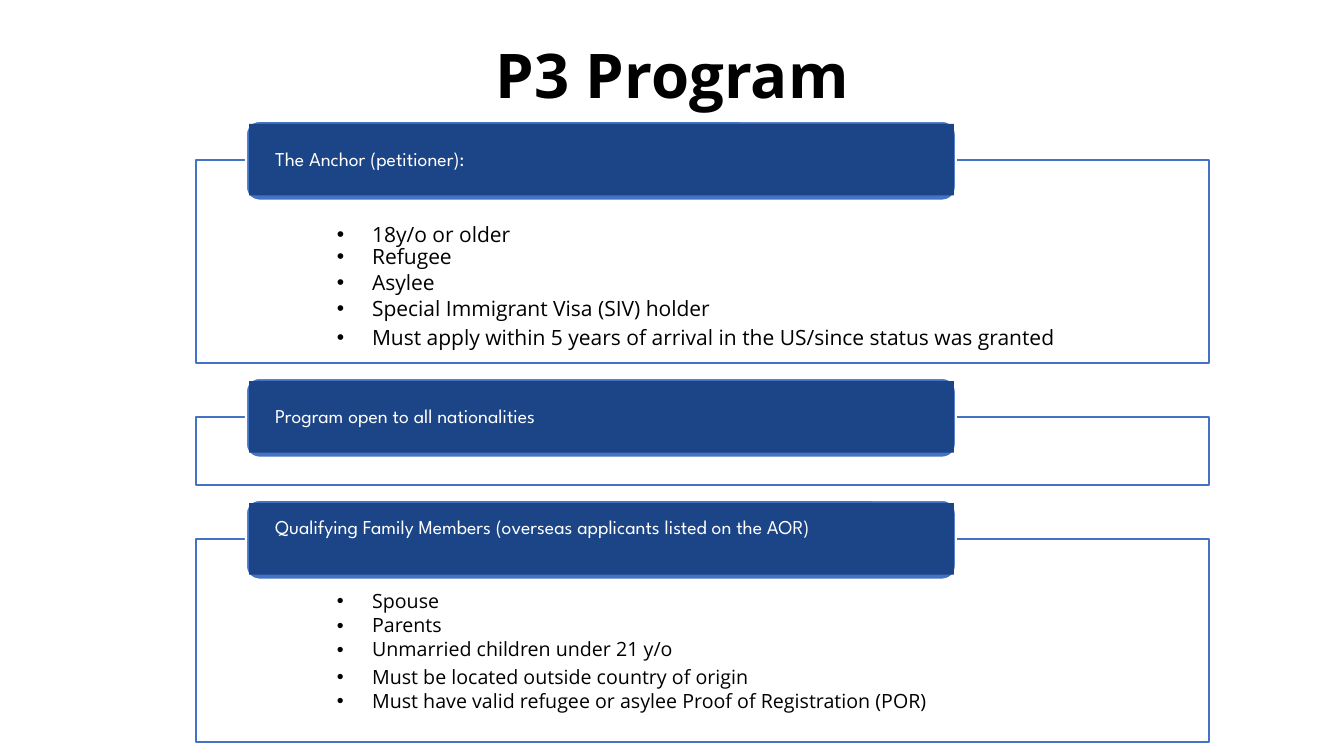
import pptx
import pptx.util
import pptx.dml.color
import pptx.enum.shapes
import pptx.enum.text
import pptx.oxml
import pptx.oxml.ns
import lxml.etree

Inches = pptx.util.Inches
Pt = pptx.util.Pt
SHAPE = pptx.enum.shapes.MSO_SHAPE
ANCHOR = pptx.enum.text.MSO_ANCHOR
ALIGN = pptx.enum.text.PP_ALIGN


def rgb(value):
    return pptx.dml.color.RGBColor.from_string(value)


def add_xml(parent, tag, **attrs):
    el = lxml.etree.SubElement(parent, pptx.oxml.ns.qn(tag))
    for name, value in attrs.items():
        el.set(name, value)
    return el


class Deck:
    BODY_FONT = "Open Sans"
    BAR_FONT = "League Spartan"
    BLACK = "000000"
    WHITE = "FFFFFF"
    BLUE = "4472C4"
    NAVY = "1C4587"
    LEFT, WIDTH = 1.94, 10.05

    def __init__(self, prs):
        self.s = prs.slides.add_slide(prs.slide_layouts[5])

    def style(self, p, font, size, color, bold=False):
        for r in p.runs:
            r.font.name = font
            r.font.size = Pt(size)
            r.font.bold = bold
            r.font.color.rgb = rgb(color)

    def insets(self, tf, left, top, right, bottom):
        tf.word_wrap = True
        tf.margin_left, tf.margin_top = Inches(left), Inches(top)
        tf.margin_right, tf.margin_bottom = Inches(right), Inches(bottom)

    def title(self, text, left, top, width, height):
        sp = self.s.shapes.title
        sp.left, sp.top = Inches(left), Inches(top)
        sp.width, sp.height = Inches(width), Inches(height)
        tf = sp.text_frame
        tf.text = text
        tf.auto_size = pptx.enum.text.MSO_AUTO_SIZE.NONE
        tf.vertical_anchor = ANCHOR.MIDDLE
        self.insets(tf, 0.1, 0.05, 0.1, 0.05)
        p = tf.paragraphs[0]
        p.alignment = ALIGN.CENTER
        self.style(p, self.BODY_FONT, 44, self.BLACK, True)

    def box(self, kind, left, top, width, height, fill, line=None):
        sp = self.s.shapes.add_shape(
            kind, Inches(left), Inches(top), Inches(width), Inches(height))
        sp.shadow.inherit = False
        sp.fill.solid()
        sp.fill.fore_color.rgb = rgb(fill)
        if line:
            sp.line.color.rgb = rgb(line)
            sp.line.width = Pt(1.5)
        else:
            sp.line.fill.background()
        return sp

    def frame(self, top, height):
        sp = self.box(SHAPE.RECTANGLE, self.LEFT, top, self.WIDTH, height,
                      self.WHITE, self.BLUE)
        color = sp.fill._xPr.find(".//" + pptx.oxml.ns.qn("a:srgbClr"))
        add_xml(color, "a:alpha", val="89000")

    def bar(self, text, top, bottom_inset):
        self.box(SHAPE.ROUNDED_RECTANGLE, 2.44, top, 7.04, 0.79,
                 self.BLUE, self.WHITE)
        sp = self.box(SHAPE.RECTANGLE, 2.47, top + 0.03, 6.99, 0.71, self.NAVY)
        tf = sp.text_frame
        tf.text = text
        tf.vertical_anchor = ANCHOR.MIDDLE
        self.insets(tf, 0.26, 0, 0.26, bottom_inset)
        p = tf.paragraphs[0]
        p.alignment = ALIGN.LEFT
        p.line_spacing = 0.9
        self.style(p, self.BAR_FONT, 14, self.WHITE)

    def bullets(self, items, top, height, top_inset, size):
        tb = self.s.shapes.add_textbox(
            Inches(self.LEFT), Inches(top), Inches(self.WIDTH), Inches(height))
        tf = tb.text_frame
        self.insets(tf, 0.75, top_inset, 0.75, 0.11)
        tf.text = "\n".join(text for text, _, _ in items)
        for p, (_, spacing, before) in zip(tf.paragraphs, items):
            p.level = 1
            p.line_spacing = spacing
            p.space_before = Pt(before)
            self.style(p, self.BODY_FONT, size, self.BLACK)
            pPr = p._p.get_or_add_pPr()
            pPr.set("marL", str(Inches(1)))
            pPr.set("indent", str(Inches(-0.35)))
            add_xml(add_xml(pPr, "a:buClr"), "a:srgbClr", val=self.BLACK)
            add_xml(pPr, "a:buFont", typeface="Arial")
            add_xml(pPr, "a:buChar", char="•")


ANCHOR_ITEMS = [
    ("18y/o or older", 1.15, 12),
    ("Refugee", 0.9, 0),
    ("Asylee", 0.9, 2.1),
    ("Special Immigrant Visa (SIV) holder", 0.9, 2.1),
    ("Must apply within 5 years of arrival in the US/since status was granted", 1.15, 0),
]
FAMILY_ITEMS = [
    ("Spouse", 0.9, 0),
    ("Parents", 0.9, 2.1),
    ("Unmarried children under 21 y/o", 0.9, 2.1),
    ("Must be located outside country of origin", 1.15, 0),
    ("Must have valid refugee or asylee Proof of Registration (POR)", 0.9, 2.1),
]
PANELS = [
    ("The Anchor (petitioner):", 2.01, 0, (ANCHOR_ITEMS, 1.84, 2.01, 0.32, 15)),
    ("Program open to all nationalities", 0.67, 0, None),
    ("Qualifying Family Members (overseas applicants listed on the AOR)", 2.01, 0.21,
     (FAMILY_ITEMS, 5.13, 1.9, 0.74, 14)),
]
PANEL_GAP = 0.54
BAR_RISE = 0.39


def main():
    prs = pptx.Presentation()
    prs.slide_width, prs.slide_height = Inches(13.33), Inches(7.5)
    deck = Deck(prs)
    deck.title("P3 Program", 3.4, 0.29, 6.54, 0.88)
    top = 1.59
    for heading, height, bottom_inset, details in PANELS:
        deck.frame(top, height)
        if details:
            deck.bullets(*details)
        deck.bar(heading, top - BAR_RISE, bottom_inset)
        top += height + PANEL_GAP
    prs.save("out.pptx")


if __name__ == "__main__":
    main()
